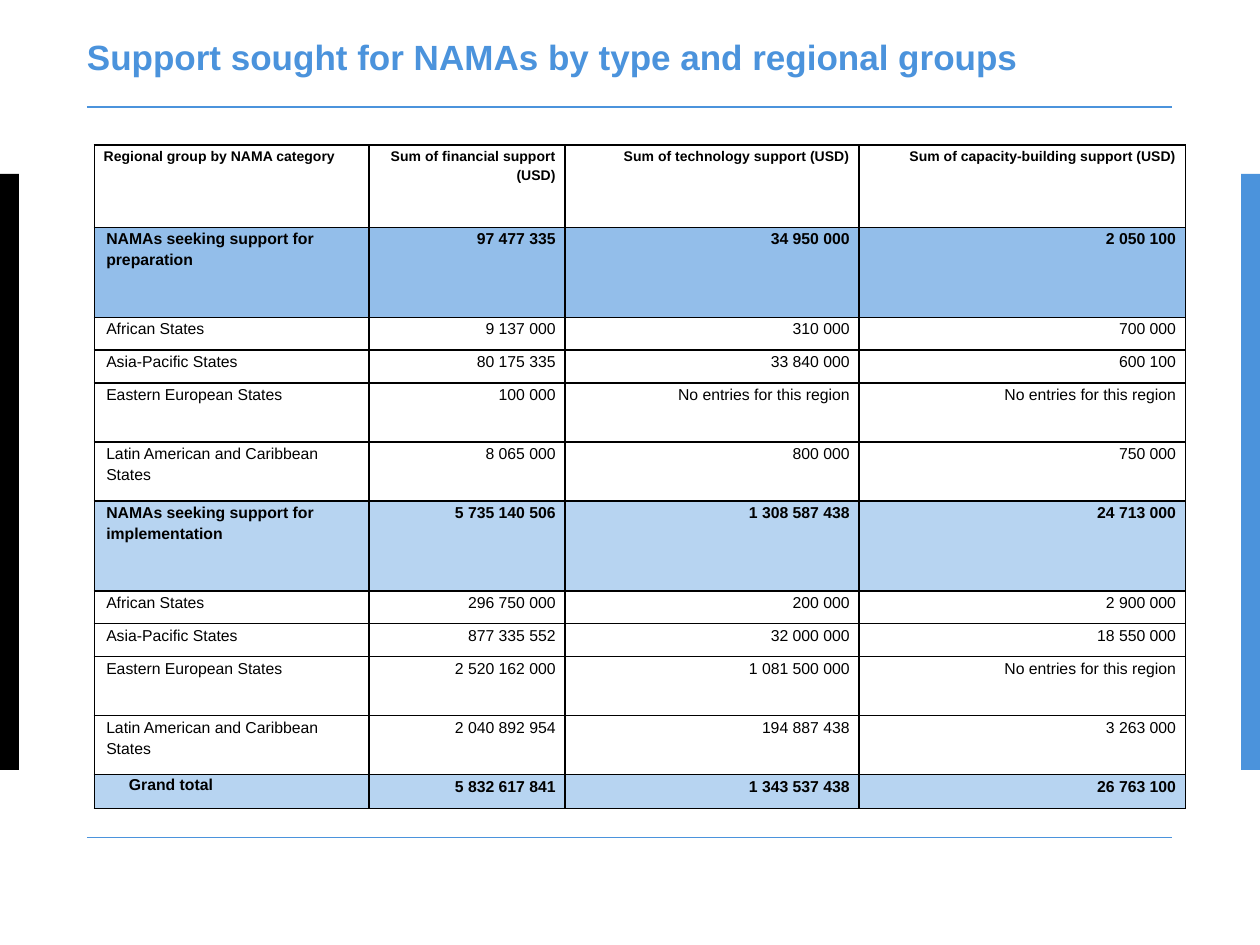
from dataclasses import dataclass

from lxml.etree import SubElement
from pptx import Presentation
from pptx.dml.color import RGBColor
from pptx.enum.shapes import MSO_CONNECTOR, MSO_SHAPE
from pptx.enum.text import MSO_ANCHOR, PP_ALIGN
from pptx.oxml.ns import qn
from pptx.util import Pt

COLORS = {
    "black": "000000",
    "blue": "4B93DC",
    "preparation": "93BEEA",
    "implementation": "B7D4F1",
}
FONT = "Arial"
CONTENT_LEFT, CONTENT_WIDTH = 49.7, 620
COLUMN_WIDTHS = (157, 112, 168, 186.5)
NO_ENTRIES = "No entries for this region"


@dataclass(frozen=True)
class SideBar:
    left: float
    color: str


@dataclass(frozen=True)
class SupportRow:
    values: tuple[str, str, str, str]
    height: float = 18.75
    fill: str | None = None
    bold: bool = False
    size: float = 9
    label_spacing: float = 12
    value_spacing: float = 12
    label_indent: float = 1.44


def group_row(label: str, fill: str, *sums: str) -> SupportRow:
    return SupportRow((label, *sums), 51.4, fill, bold=True)


def region_rows(african: tuple, asian: tuple, european: tuple, latin: tuple) -> list[SupportRow]:
    return [
        SupportRow(("African States", *african)),
        SupportRow(("Asia-Pacific States", *asian)),
        SupportRow(("Eastern European States", *european), 33.75),
        SupportRow(("Latin American and Caribbean States", *latin), 33.75),
    ]


SIDE_BARS = (SideBar(0, "black"), SideBar(709.2, "blue"))
RULE_TOPS = (61.2, 478.6)
SUPPORT_ROWS = [
    SupportRow(
        (
            "Regional group by NAMA category",
            "Sum of financial support (USD)",
            "Sum of technology support (USD)",
            "Sum of capacity-building support (USD)",
        ),
        47, bold=True, size=8, label_spacing=11, value_spacing=11, label_indent=0,
    ),
    group_row("NAMAs seeking support for preparation", "preparation",
              "97 477 335", "34 950 000", "2 050 100"),
    *region_rows(
        ("9 137 000", "310 000", "700 000"),
        ("80 175 335", "33 840 000", "600 100"),
        ("100 000", NO_ENTRIES, NO_ENTRIES),
        ("8 065 000", "800 000", "750 000"),
    ),
    group_row("NAMAs seeking support for implementation", "implementation",
              "5 735 140 506", "1 308 587 438", "24 713 000"),
    *region_rows(
        ("296 750 000", "200 000", "2 900 000"),
        ("877 335 552", "32 000 000", "18 550 000"),
        ("2 520 162 000", "1 081 500 000", NO_ENTRIES),
        ("2 040 892 954", "194 887 438", "3 263 000"),
    ),
    SupportRow(("Grand total", "5 832 617 841", "1 343 537 438", "26 763 100"),
               19.4, "implementation", bold=True, label_spacing=11, label_indent=14.4),
]


def rgb(name: str) -> RGBColor:
    return RGBColor.from_string(COLORS[name])


def style_paragraph(paragraph, size: float, spacing: float, color: str, bold: bool) -> None:
    paragraph.line_spacing = Pt(spacing)
    paragraph.space_before = Pt(0)
    paragraph.font.name = FONT
    paragraph.font.size = Pt(size)
    paragraph.font.bold = bold
    paragraph.font.color.rgb = rgb(color)


def draw_side_bar(slide, side_bar: SideBar) -> None:
    bar = slide.shapes.add_shape(
        MSO_SHAPE.RECTANGLE, Pt(side_bar.left), Pt(99.4), Pt(10.8), Pt(340.6))
    bar.shadow.inherit = False
    bar.fill.solid()
    bar.fill.fore_color.rgb = rgb(side_bar.color)
    bar.line.fill.background()


def draw_rule(slide, top: float) -> None:
    rule = slide.shapes.add_connector(
        MSO_CONNECTOR.STRAIGHT, Pt(CONTENT_LEFT), Pt(top),
        Pt(CONTENT_LEFT + CONTENT_WIDTH), Pt(top))
    rule.line.color.rgb = rgb("blue")
    rule.line.width = Pt(1)
    SubElement(rule._element.spPr, qn("a:effectLst"))


def draw_title(slide, title: str) -> None:
    frame = slide.shapes.add_textbox(
        Pt(CONTENT_LEFT), Pt(24.5), Pt(CONTENT_WIDTH), Pt(24.5)).text_frame
    frame.word_wrap = True
    frame.vertical_anchor = MSO_ANCHOR.MIDDLE
    frame.margin_left = frame.margin_right = frame.margin_top = frame.margin_bottom = 0
    frame.text = title
    style_paragraph(frame.paragraphs[0], 20, 15, "blue", True)


def draw_borders(cell) -> None:
    properties = cell._tc.get_or_add_tcPr()
    for side in ("lnL", "lnR", "lnT", "lnB"):
        border = SubElement(properties, qn(f"a:{side}"), w=str(Pt(1)))
        fill = SubElement(border, qn("a:solidFill"))
        SubElement(fill, qn("a:srgbClr"), val=COLORS["black"])


def fill_cell(cell, row: SupportRow, column: int) -> None:
    cell.margin_left = cell.margin_right = Pt(5.4)
    cell.margin_top = cell.margin_bottom = 0
    cell.vertical_anchor = MSO_ANCHOR.TOP
    cell.text = row.values[column]
    paragraph = cell.text_frame.paragraphs[0]
    is_label = column == 0
    if is_label:
        paragraph._p.get_or_add_pPr().set("marL", str(Pt(row.label_indent)))
    paragraph.alignment = PP_ALIGN.LEFT if is_label else PP_ALIGN.RIGHT
    spacing = row.label_spacing if is_label else row.value_spacing
    style_paragraph(paragraph, row.size, spacing, "black", row.bold)
    draw_borders(cell)
    if row.fill:
        cell.fill.solid()
        cell.fill.fore_color.rgb = rgb(row.fill)
    else:
        cell.fill.background()


def draw_support_table(slide, rows: list[SupportRow]) -> None:
    table = slide.shapes.add_table(
        len(rows), len(COLUMN_WIDTHS), Pt(53.9), Pt(82.9),
        Pt(sum(COLUMN_WIDTHS)), Pt(sum(row.height for row in rows))).table
    table.first_row = False
    table.horz_banding = False
    for column, width in zip(table.columns, COLUMN_WIDTHS):
        column.width = Pt(width)
    for row_index, row in enumerate(rows):
        table.rows[row_index].height = Pt(row.height)
        for column_index in range(len(COLUMN_WIDTHS)):
            fill_cell(table.cell(row_index, column_index), row, column_index)


def main() -> None:
    presentation = Presentation()
    presentation.slide_width, presentation.slide_height = Pt(720), Pt(540)
    slide = presentation.slides.add_slide(presentation.slide_layouts[6])
    for side_bar in SIDE_BARS:
        draw_side_bar(slide, side_bar)
    for top in RULE_TOPS:
        draw_rule(slide, top)
    draw_title(slide, "Support sought for NAMAs by type and regional groups")
    draw_support_table(slide, SUPPORT_ROWS)
    presentation.save("out.pptx")


if __name__ == "__main__":
    main()
